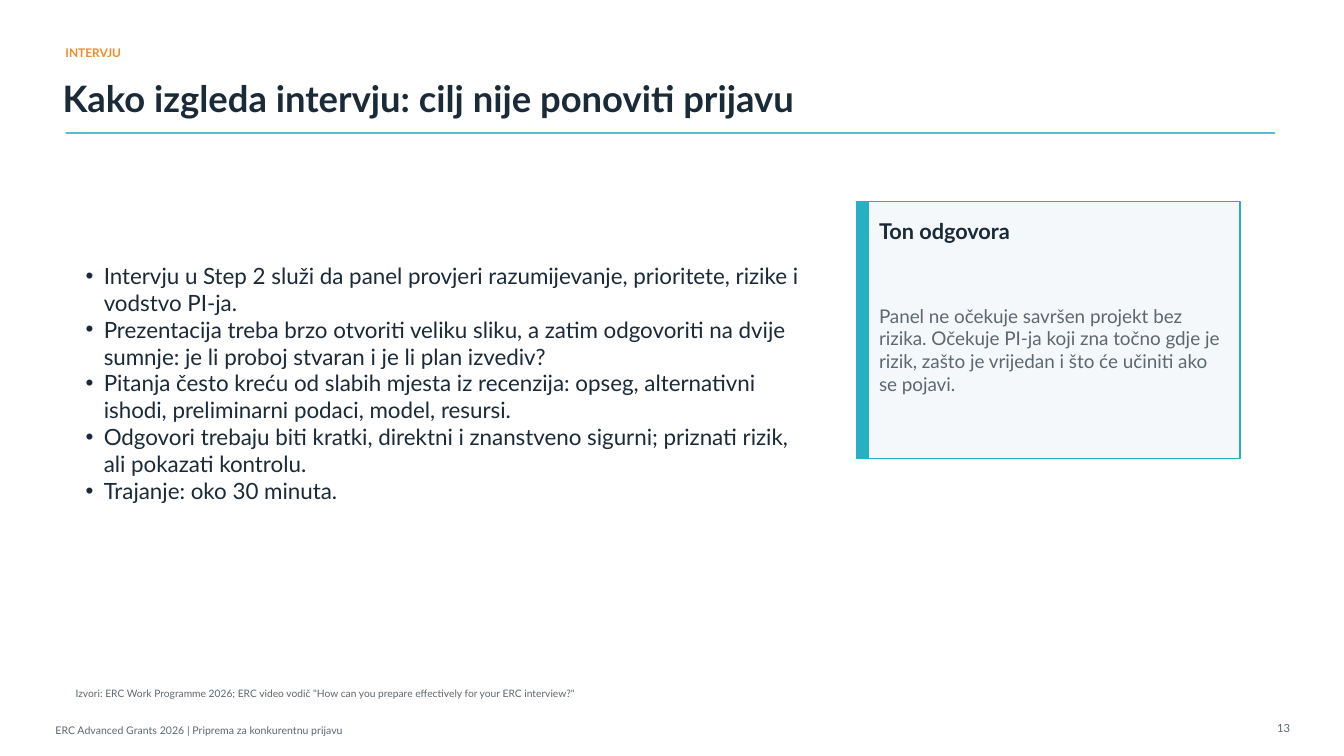
from lxml.etree import SubElement
from pptx import Presentation
from pptx.dml.color import RGBColor
from pptx.enum.shapes import MSO_CONNECTOR, MSO_SHAPE
from pptx.enum.text import MSO_ANCHOR, MSO_AUTO_SIZE, PP_ALIGN
from pptx.oxml.ns import qn
from pptx.util import Inches, Pt

CELL = 0.1  # grid pitch in inches; every length below counts cells
FONT = "Lato"
INK, GREY, TEAL, ORANGE, PALE = "1B2A38", "5C6770", "27AFC4", "F28C28", "F5F8FA"

POINTS = [
    "Intervju u Step 2 služi da panel provjeri razumijevanje, prioritete, rizike i vodstvo PI-ja.",
    "Prezentacija treba brzo otvoriti veliku sliku, a zatim odgovoriti na dvije sumnje: "
    "je li proboj stvaran i je li plan izvediv?",
    "Pitanja često kreću od slabih mjesta iz recenzija: opseg, alternativni ishodi, "
    "preliminarni podaci, model, resursi.",
    "Odgovori trebaju biti kratki, direktni i znanstveno sigurni; priznati rizik, "
    "ali pokazati kontrolu.",
    "Trajanje: oko 30 minuta.",
]
TONE = ("Panel ne očekuje savršen projekt bez rizika. Očekuje PI-ja koji zna točno "
        "gdje je rizik, zašto je vrijedan i što će učiniti ako se pojavi.")
SOURCE = ('Izvori: ERC Work Programme 2026; ERC video vodič '
          '"How can you prepare effectively for your ERC interview?"')


def grid(*cells):
    return [Inches(c * CELL) for c in cells]


def color(code):
    return RGBColor.from_string(code)


def add_bullet(para):
    props = para._p.get_or_add_pPr()
    props.set("marL", str(Inches(0.18)))
    props.set("indent", str(-Inches(0.18)))
    SubElement(props, qn("a:buFont")).set("typeface", "Arial")
    SubElement(props, qn("a:buChar")).set("char", "•")


def write(shape, lines, size, ink, bold=False, align=PP_ALIGN.LEFT, bullet=False):
    frame = shape.text_frame
    frame.word_wrap = True
    frame.auto_size = MSO_AUTO_SIZE.NONE
    frame.vertical_anchor = MSO_ANCHOR.MIDDLE
    frame.margin_left = frame.margin_right = frame.margin_top = frame.margin_bottom = 0
    for i, line in enumerate(lines):
        para = frame.add_paragraph() if i else frame.paragraphs[0]
        para.alignment = align
        para.line_spacing = 1.0
        if bullet:
            add_bullet(para)
        run = para.add_run()
        run.text = line
        run.font.name, run.font.size, run.font.bold = FONT, Pt(size), bold
        run.font.color.rgb = color(ink)


def label(slide, box, lines, size, ink, **style):
    write(slide.shapes.add_textbox(*grid(*box)), lines, size, ink, **style)


def panel(slide, box, fill, width):
    rect = slide.shapes.add_shape(MSO_SHAPE.RECTANGLE, *grid(*box))
    rect.shadow.inherit = False
    rect.fill.solid()
    rect.fill.fore_color.rgb = color(fill)
    rect.line.color.rgb = color(TEAL)
    rect.line.width = Pt(width)


def rule(slide, x, y, width):
    line = slide.shapes.add_connector(MSO_CONNECTOR.STRAIGHT, *grid(x, y, x + width, y))
    line.line.color.rgb = color(TEAL)
    line.line.width = Pt(1.1)
    shade = line.line._ln.find(".//" + qn("a:srgbClr"))
    SubElement(shade, qn("a:alpha")).set("val", "80000")
    SubElement(line._element.spPr, qn("a:effectLst"))


def header(slide, box):
    x, y, w, h = box
    label(slide, (x, y, w - 2, 2.4), ["INTERVJU"], 8.5, ORANGE, bold=True)
    title = slide.shapes.title
    title.left, title.top, title.width, title.height = grid(x - 0.3, y + 3, w - 1, 5.5)
    write(title, ["Kako izgleda intervju: cilj nije ponoviti prijavu"], 26, INK, bold=True)
    rule(slide, x, y + h, w)


def card(slide, box):
    x, y, w, h = box
    panel(slide, box, PALE, 1.1)
    panel(slide, (x, y, 1.1, h), TEAL, 1)
    left, wide = x + 2.2, w - 3.5
    label(slide, (left, y + 1.5, wide, 2.8), ["Ton odgovora"], 15.5, INK, bold=True)
    label(slide, (left, y + 5.2, wide, h - 6.5), [TONE], 13.5, GREY)


def footer(slide, box):
    x, y, w, h = box
    label(slide, (x + 2, y, 119, 2.5), [SOURCE], 7.3, GREY)
    label(slide, (x, y + 4, 74, 2),
          ["ERC Advanced Grants 2026 | Priprema za konkurentnu prijavu"], 7.5, GREY)
    label(slide, (x + w - 2.5, y + 3.7, 2.5, 2), ["13"], 8, GREY, align=PP_ALIGN.RIGHT)


def main():
    deck = Presentation()
    deck.slide_width, deck.slide_height = grid(133.33, 75)
    slide = deck.slides.add_slide(deck.slide_layouts[5])
    header(slide, (6.5, 4, 120, 9.2))
    label(slide, (8.5, 16, 72, 44), POINTS, 16, INK, bullet=True)
    card(slide, (85, 20, 38, 25.5))
    footer(slide, (5.5, 67.5, 122.5, 6))
    deck.save("out.pptx")


if __name__ == "__main__":
    main()
